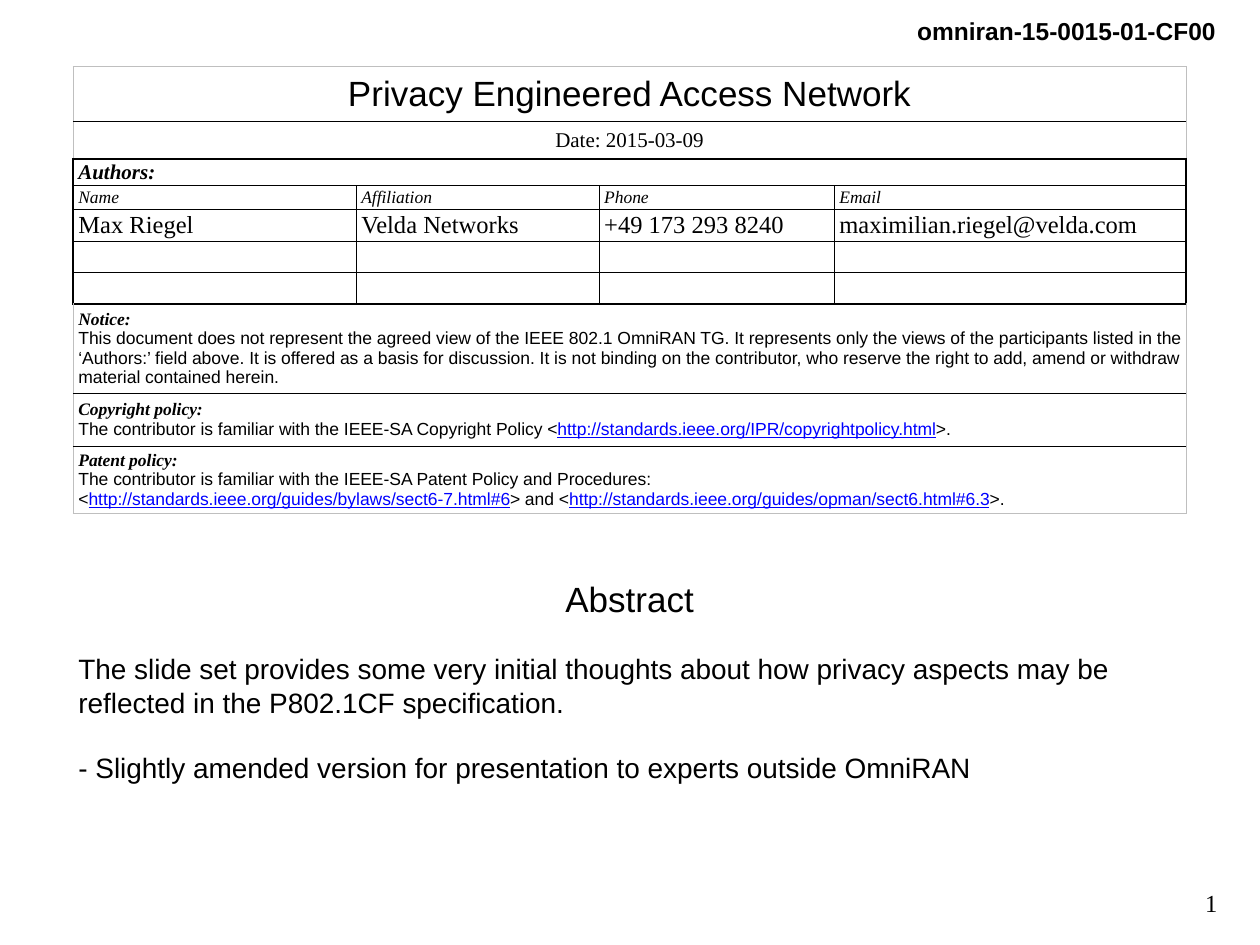
from dataclasses import dataclass

from lxml.etree import SubElement
from pptx import Presentation
from pptx.dml.color import RGBColor
from pptx.enum.text import MSO_ANCHOR, MSO_AUTO_SIZE, PP_ALIGN
from pptx.oxml.ns import qn
from pptx.util import Pt


@dataclass(frozen=True)
class Theme:
    sans: str = "Arial"
    serif: str = "Times New Roman"
    ink: str = "000000"
    link: str = "0000FF"
    frame: str = "BFBFBF"
    title: int = 20
    body: int = 16
    large: int = 14
    medium: int = 12
    small: int = 10


THEME = Theme()

# Text formats
TITLE = dict(name=THEME.sans, size=THEME.title)
BODY = dict(name=THEME.sans, size=THEME.body)
HEADER = dict(name=THEME.sans, size=THEME.large, bold=True)
ENTRY = dict(name=THEME.serif, size=THEME.large)
DATE = dict(name=THEME.serif, size=THEME.medium)
AUTHORS = dict(DATE, bold=True, italic=True)
LABEL = dict(name=THEME.serif, size=THEME.small, italic=True)
HEADING = dict(LABEL, bold=True)
POLICY = dict(name=THEME.sans, size=THEME.small)
LINK = dict(POLICY, underline=True, color=THEME.link)

# Table layout
COLUMNS = (161.7, 138.8, 134.4, 201.1)
LEFT, TOP, WIDTH = 41.8, 38, sum(COLUMNS)
THIN, THICK = (THEME.ink, 0.5), (THEME.ink, 1)
EDGE = (THEME.frame, 0.5)
CENTER = PP_ALIGN.CENTER


class SlideBuilder:
    def __init__(self, slide, theme):
        self.slide, self.theme = slide, theme

    def paragraph(self, para, spans, align=PP_ALIGN.LEFT, before=0):
        """Fill a paragraph with (text, format) spans."""
        para.alignment = align
        if before:
            para.space_before = Pt(before)
        for text, style in spans:
            span = para.add_run()
            span.text = text
            values = dict(style, size=Pt(style["size"]))
            color = values.pop("color", self.theme.ink)
            for key, value in values.items():
                setattr(span.font, key, value)
            span.font.color.rgb = RGBColor.from_string(color)

    def paragraphs(self, frame, lines, align=PP_ALIGN.LEFT):
        for index, spans in enumerate(lines):
            para = frame.add_paragraph() if index else frame.paragraphs[0]
            self.paragraph(para, spans, align)

    def textbox(self, left, top, width, height, **values):
        box = self.slide.shapes.add_textbox(Pt(left), Pt(top), Pt(width), Pt(height))
        for key, value in values.items():
            setattr(box.text_frame, key, value)
        return box.text_frame

    def corner_text(self, left, top, width, text, style):
        frame = self.textbox(left, top, width, 24.2, word_wrap=False,
                             auto_size=MSO_AUTO_SIZE.SHAPE_TO_FIT_TEXT)
        self.paragraph(frame.paragraphs[0], [(text, style)], PP_ALIGN.RIGHT)

    def table(self, left, top, columns, heights):
        graphic = self.slide.shapes.add_table(
            len(heights), len(columns), Pt(left), Pt(top),
            Pt(sum(columns)), Pt(sum(heights)))
        table = graphic.table
        table.first_row = table.horz_banding = False
        for column, width in zip(table.columns, columns):
            column.width = Pt(width)
        for row, height in zip(table.rows, heights):
            row.height = Pt(height)
        return table

    def cell(self, cell, lines, borders, align=PP_ALIGN.LEFT, pad=0):
        """Borders are (colour, width) pairs for left, right, top, bottom."""
        values = dict(vertical_anchor=MSO_ANCHOR.MIDDLE, margin_left=Pt(3),
                      margin_right=Pt(3), margin_top=Pt(pad), margin_bottom=Pt(pad))
        for key, value in values.items():
            setattr(cell, key, value)
        properties = cell._tc.get_or_add_tcPr()
        for side, (color, width) in zip("LRTB", borders):
            line = SubElement(properties, qn(f"a:ln{side}"), w=str(Pt(width)))
            fill = SubElement(line, qn("a:solidFill"))
            SubElement(fill, qn("a:srgbClr"), val=color)
        cell.fill.background()
        self.paragraphs(cell.text_frame, lines, align)
        if not lines:
            # An empty cell still needs a type size, which sets the row height
            SubElement(cell.text_frame.paragraphs[0]._p, qn("a:endParaRPr"),
                       sz=str(self.theme.large * 100))


def policy(heading, *lines):
    return [[(heading, HEADING)], *lines]


NOTICE = policy(
    "Notice:",
    [("This document does not represent the agreed view of the IEEE 802.1 OmniRAN TG. "
      "It represents only the views of the participants listed in the ‘Authors:’ field "
      "above. It is offered as a basis for discussion. It is not binding on the "
      "contributor, who reserve the right to add, amend or withdraw material contained "
      "herein.", POLICY)])
COPYRIGHT = policy(
    "Copyright policy:",
    [("The contributor is familiar with the IEEE-SA Copyright Policy <", POLICY),
     ("http://standards.ieee.org/IPR/copyrightpolicy.html", LINK), (">.", POLICY)])
PATENT = policy(
    "Patent policy:",
    [("The contributor is familiar with the IEEE-SA Patent Policy and Procedures:", POLICY)],
    [("<", POLICY), ("http://standards.ieee.org/guides/bylaws/sect6-7.html#6", LINK),
     ("> and <", POLICY),
     ("http://standards.ieee.org/guides/opman/sect6.html#6.3", LINK), (">.", POLICY)])

# Full-width rows: row number, lines, borders, alignment, padding
WIDE_ROWS = (
    (0, [[("Privacy Engineered Access Network", TITLE)]], (EDGE, EDGE, EDGE, THICK), CENTER, 3),
    (1, [[("Date: 2015-03-09", DATE)]], (EDGE, EDGE, THICK, THICK), CENTER, 3),
    (2, [[("Authors:", AUTHORS)]], (THICK, THICK, THICK, THIN), PP_ALIGN.LEFT, 0),
    (7, NOTICE, (EDGE, EDGE, THICK, THICK), PP_ALIGN.LEFT, 0),
    (8, COPYRIGHT, (EDGE, EDGE, THICK, THICK), PP_ALIGN.LEFT, 0),
    (9, PATENT, (EDGE, EDGE, THICK, EDGE), PP_ALIGN.LEFT, 0),
)

# Author rows, from row 3 on
AUTHOR_ROWS = (
    (LABEL, ("Name", "Affiliation", "Phone", "Email")),
    (ENTRY, ("Max Riegel", "Velda Networks", "+49 173 293 8240",
             "maximilian.riegel@velda.com")),
    (ENTRY, ("",) * 4),
    (ENTRY, ("",) * 4),
)


def main():
    deck = Presentation()
    deck.slide_width, deck.slide_height = Pt(720), Pt(540)
    page = SlideBuilder(deck.slides.add_slide(deck.slide_layouts[6]), THEME)

    # Document number and page number
    page.corner_text(515.5, 5.8, 186.5, "omniran-15-0015-01-CF00", HEADER)
    page.corner_text(671.8, 504, 31, "1", ENTRY)

    # Document table
    heights = (31.5, 21.4, 15.2, 13.7, 18, 18, 18, 51, 30.3, 38.2)
    table = page.table(LEFT, TOP, COLUMNS, heights)
    last = len(COLUMNS) - 1
    for row, lines, borders, align, pad in WIDE_ROWS:
        table.cell(row, 0).merge(table.cell(row, last))
        for column in range(last + 1):
            page.cell(table.cell(row, column), [] if column else lines, borders, align, pad)
    for row, (style, texts) in enumerate(AUTHOR_ROWS, 3):
        bottom = THICK if row == 6 else THIN
        for column, text in enumerate(texts):
            borders = (THIN if column else THICK, THICK if column == last else THIN,
                       THIN, bottom)
            lines = [[(text, style)]] if text else []
            page.cell(table.cell(row, column), lines, borders)

    # Abstract
    frame = page.textbox(LEFT, 326.9, WIDTH, 165.6, word_wrap=True, margin_left=Pt(3),
                         margin_right=Pt(3), margin_top=Pt(3), margin_bottom=Pt(3))
    page.paragraph(frame.paragraphs[0], [("Abstract", TITLE)], CENTER)
    for text in ("The slide set provides some very initial thoughts about how privacy "
                 "aspects may be reflected in the P802.1CF specification.",
                 "- Slightly amended version for presentation to experts outside OmniRAN"):
        page.paragraph(frame.add_paragraph(), [(text, BODY)], before=18.4)

    deck.save("out.pptx")


if __name__ == "__main__":
    main()
